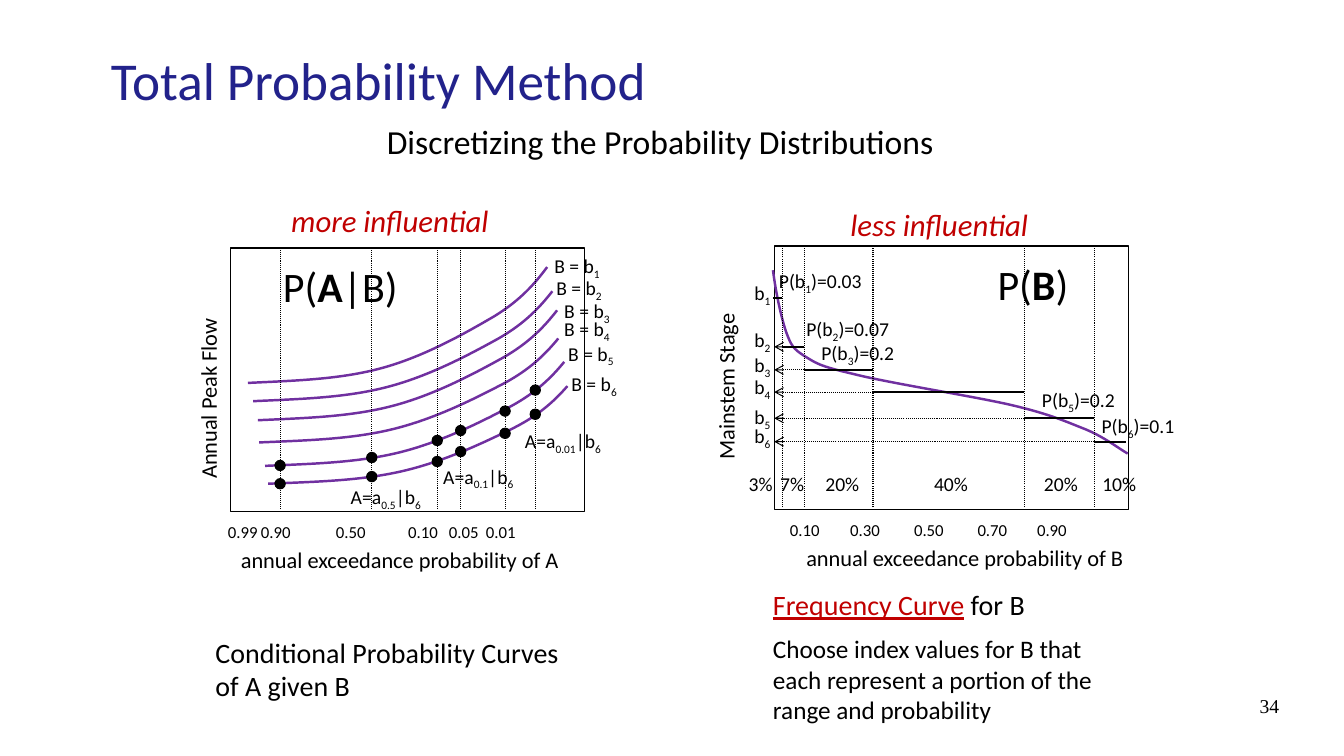
import pptx
import pptx.util
import pptx.dml.color
import pptx.enum.dml
import pptx.enum.shapes
import pptx.enum.text
import pptx.oxml.xmlchemy

Cm = pptx.util.Cm
Pt = pptx.util.Pt
Align = pptx.enum.text.PP_ALIGN
Kind = pptx.enum.shapes.MSO_SHAPE
DOTS = pptx.enum.dml.MSO_LINE.ROUND_DOT

BLACK, RED, PURPLE, NAVY = "000000", "C00000", "7030A0", "22228B"
SUB = {"base": "-25000"}

# Relative bend of every conditional curve: anchors and controls
BEND = list(zip(
    (0, .16, .31, .45, .59, .72, .82, .91, .96, 1),
    (1, .98, .97, .87, .77, .58, .43, .29, .14, 0)))
BEND_W = 7.54
# Left, top and height of each curve, then left and top of its label
CURVES = [
    (6.25, 6.73, 2.92, 13.72, 6.27), (6.38, 7.34, 2.77, 13.77, 6.83),
    (6.5, 7.82, 2.77, 13.97, 7.42), (6.53, 8.53, 2.62, 13.97, 7.87),
    (6.68, 9.12, 2.62, 14.07, 8.48), (6.76, 9.73, 2.46, 14.15, 9.25)]
CUTS_A = [7.06, 9.37, 11.02, 11.61, 12.73, 13.49]
DOT_ROWS = [(12.19, 12.01, 11.63, 11.38, 10.92, 10.44),
            (11.73, 11.53, 11.1, 10.85, 10.36, 9.83)]
TICKS_A = [("0.99", 6.12), ("0.90", 6.95), ("0.50", 8.84),
           ("0.10", 10.66), ("0.05", 11.69), ("0.01", 12.62)]
NOTES_A = [("0.5", 8.59, 12.09), ("0.1", 10.92, 11.58), ("0.01", 12.98, 10.69)]

STAGE = [
    (19.48, 6.81), (19.56, 7.42), (19.69, 8), (19.81, 8.36), (19.94, 8.71),
    (19.99, 8.79), (20.27, 8.97), (20.55, 9.14), (20.62, 9.22), (21.49, 9.42),
    (22.38, 9.65), (24.51, 9.98), (25.5, 10.21), (26.47, 10.44),
    (26.85, 10.62), (27.36, 10.82), (27.84, 11.02), (28.19, 11.3),
    (28.42, 11.43)]
CUTS_B = [19.71, 20.27, 22, 25.81, 27.58]
EDGES = [19.48, *CUTS_B, 28.37]
# Height of each step, top of its index label, share and left of the share
STEPS = [(7.52, 6.96, "3%", 18.62), (8.74, 8.15, "7%", 19.41),
         (9.32, 8.76, "20%", 20.55), (9.88, 9.32, "40%", 23.29),
         (10.54, 10.08, "20%", 26.06), (11.13, 10.57, "10%", 27.53)]
TICKS_B = [("0.10", 20.28), ("0.30", 21.8), ("0.50", 23.41),
           ("0.70", 25.01), ("0.90", 26.51)]
NOTES_B = [(1, "0.03", 19.38, 6.65), (2, "0.07", 20.07, 7.87),
           (3, "0.2", 20.45, 8.46), (5, "0.2", 26.01, 9.65),
           (6, "0.1", 27.51, 10.31)]


def rgb(code):
    return pptx.dml.color.RGBColor.from_string(code)


def node(tag):
    return pptx.oxml.xmlchemy.OxmlElement(tag)


def style(font, fmt):
    """Apply a dict of format values to a font."""
    for key, val in fmt.items():
        if key == "color":
            font.color.rgb = rgb(val)
        elif key == "base":
            font._element.set("baseline", val)
        else:
            setattr(font, key, Pt(val) if key == "size" else val)


def write(para, text, fmt, mark=SUB):
    """Fill a paragraph; parts between underscores also take the mark format."""
    base = {"name": "Calibri", "color": BLACK, **fmt}
    for i, part in enumerate(text.split("_")):
        if part:
            run = para.add_run()
            run.text = part
            style(run.font, {**base, **mark} if i % 2 else base)


def label(slide, text, at, size=14, mark=SUB, turn=0, align=Align.LEFT, **fmt):
    box = slide.shapes.add_textbox(*map(Cm, at))
    box.rotation = turn
    frame = box.text_frame
    frame.word_wrap = True
    para = frame.paragraphs[0]
    para.alignment = align
    write(para, text, {"size": size, **fmt}, mark)
    return frame


def stroke(line, color, width, dash=None):
    line.color.rgb = rgb(color)
    line.width = Pt(width)
    if dash:
        line.dash_style = dash


def shape(slide, kind, at, fill=None):
    item = slide.shapes.add_shape(kind, *map(Cm, at))
    item.shadow.inherit = False
    if fill:
        item.fill.solid()
        item.fill.fore_color.rgb = rgb(fill)
    else:
        item.fill.background()
    stroke(item.line, BLACK, 0.75)


def rule(slide, x1, y1, x2, y2, width=0.75, dash=DOTS, arrow=False):
    link = slide.shapes.add_connector(
        pptx.enum.shapes.MSO_CONNECTOR.STRAIGHT, *map(Cm, (x1, y1, x2, y2)))
    stroke(link.line, BLACK, width, dash)
    if arrow:
        tail = node("a:tailEnd")
        tail.set("type", "arrow")
        link.line._get_or_add_ln().append(tail)
    link._element.spPr.append(node("a:effectLst"))


def curve(slide, points):
    """Draw joined Bezier arcs: a start, then two controls and an end each."""
    spots = [(Cm(x), Cm(y)) for x, y in points]
    form = slide.shapes.build_freeform(*spots[0])
    form.add_line_segments(spots[1:], close=False)
    item = form.convert_to_shape()
    item.shadow.inherit = False
    item.fill.background()
    stroke(item.line, PURPLE, 1.75)
    legs = item._element.xpath(".//a:lnTo")
    for i in range(0, len(legs), 3):
        arc = node("a:cubicBezTo")
        legs[i].addprevious(arc)
        for leg in legs[i:i + 3]:
            arc.append(leg[0])
            leg.getparent().remove(leg)


def ticks(slide, marks, top):
    for text, mid in marks:
        label(slide, text, (mid - 0.8, top, 1.6, 0.76), 12, align=Align.CENTER)


def heads(slide):
    title = slide.shapes.title
    title.left, title.top, title.width, title.height = map(
        Cm, (2.54, 0.41, 28.78, 3.18))
    title.text_frame.vertical_anchor = pptx.enum.text.MSO_ANCHOR.MIDDLE
    para = title.text_frame.paragraphs[0]
    para.alignment = Align.LEFT
    write(para, "Total Probability Method", {"size": 38, "color": NAVY})
    label(slide, "Discretizing the Probability Distributions",
          (9.5, 2.92, 15.47, 1.27), 24)
    label(slide, "34", (25.43, 17.35, 7.06, 1.27), align=Align.RIGHT,
          name="Times New Roman")


def flow(slide):
    """Left chart: flow curves of A for each index value of B."""
    shape(slide, Kind.RECTANGLE, (5.82, 6.25, 8.92, 6.63))
    for i, (x, y, high, left, top) in enumerate(CURVES, 1):
        curve(slide, [(x + BEND_W * u, y + high * v) for u, v in BEND])
        label(slide, f"B = b_{i}_", (left, top, 2.31, 0.84))
    for x in CUTS_A:
        rule(slide, x, 12.83, x, 6.22)
    for row in DOT_ROWS:
        for x, y in zip(CUTS_A, row):
            shape(slide, Kind.OVAL, (x - 0.13, y - 0.13, 0.26, 0.26), BLACK)
    for part, left, top in NOTES_A:
        label(slide, f"A=a_{part}_|b_6_", (left, top, 2.8, 0.84))
    ticks(slide, TICKS_A, 13.03)
    label(slide, "P(_A_|B)", (6.88, 6.45, 3.96, 1.52), 30, {"bold": True})
    label(slide, "more influential", (7.09, 4.95, 6.86, 1.19), 22,
          color=RED, italic=True)
    label(slide, "Annual Peak Flow", (2.26, 8.86, 5.97, 0.94), 16, turn=270)
    label(slide, "annual exceedance probability of A",
          (5.82, 13.64, 8.92, 0.94), 16)
    label(slide, "Conditional Probability Curves of A given B",
          (5.18, 15.88, 9.4, 1.96), 20)


def stage(slide):
    """Right chart: frequency curve of B cut into six steps."""
    shape(slide, Kind.RECTANGLE, (19.51, 6.2, 8.92, 6.63))
    curve(slide, STAGE)
    for x in CUTS_B:
        rule(slide, x, 12.78, x, 6.17)
    for i, (y, top, share, left) in enumerate(STEPS):
        rule(slide, EDGES[i], y, EDGES[i + 1], y, 1.5, None)
        if i:
            rule(slide, EDGES[i], y, 19.51, y, arrow=True)
        label(slide, f"b_{i + 1}_", (18.76, top, 1.1, 0.84))
        label(slide, share, (left, 11.77, 1.7, 0.84))
    for i, odds, left, top in NOTES_B:
        label(slide, f"P(b_{i}_)={odds}", (left, top, 3.43, 0.84))
    ticks(slide, TICKS_B, 12.98)
    label(slide, "P(_B_)", (24.89, 6.38, 3.96, 1.52), 30, {"bold": True})
    label(slide, "less influential", (21.18, 5.05, 6.86, 1.19), 22,
          color=RED, italic=True)
    label(slide, "Mainstem Stage", (15.77, 8.84, 5.05, 0.94), 16, turn=270)
    label(slide, "annual exceedance probability of B",
          (20.07, 13.59, 8.56, 0.94), 16)
    frame = label(slide, "_Frequency Curve_ for B", (19.23, 14.68, 9.4, 3.78),
                  20, {"underline": True, "color": RED})
    para = frame.add_paragraph()
    para.space_before = Pt(9)
    write(para, "Choose index values for B that each represent a portion "
          "of the range and probability", {"size": 18})


def main():
    deck = pptx.Presentation()
    deck.slide_width, deck.slide_height = Cm(33.87), Cm(19.05)
    slide = deck.slides.add_slide(deck.slide_layouts[5])
    heads(slide)
    flow(slide)
    stage(slide)
    deck.save("out.pptx")


if __name__ == "__main__":
    main()
